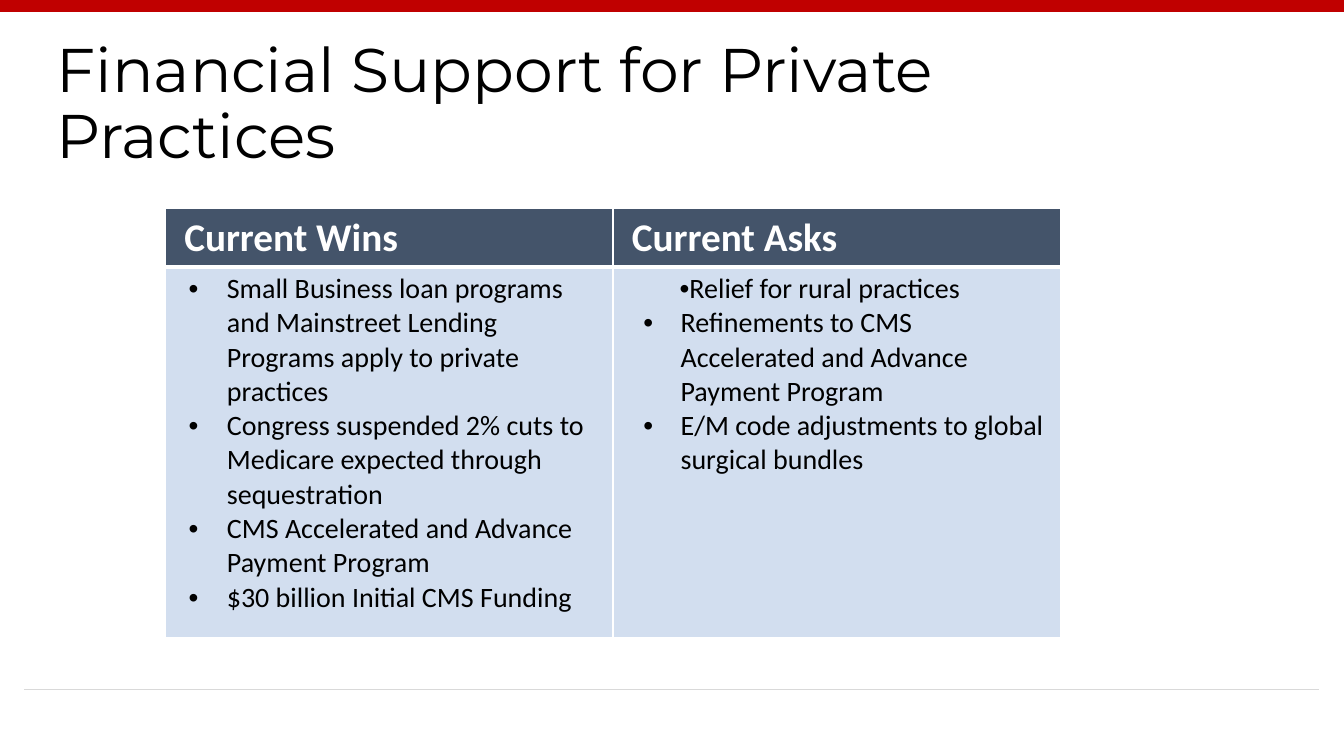
from lxml import etree
from pptx import Presentation
from pptx.dml.color import RGBColor as RGB
from pptx.enum.shapes import MSO_CONNECTOR as LINE
from pptx.enum.text import MSO_ANCHOR as ANCHOR, MSO_AUTO_SIZE as FIT, PP_ALIGN as ALIGN
from pptx.oxml.ns import qn
from pptx.util import Inches, Pt

HUES = {"red": "C00000", "gray": "D9D9D9", "navy": "44546A",
        "pale": "D2DEEF", "white": "FFFFFF", "black": "000000"}


def write(para, text, size=20, face="Calibri", hue="black", bold=False, bullet=None):
    """Fill a paragraph; bullet is its (left margin, first-line indent) in inches."""
    if bullet:
        para.level = 1
        props = para._p.get_or_add_pPr()
        props.set("marL", str(Inches(bullet[0])))
        props.set("indent", str(Inches(bullet[1])))
        etree.SubElement(props, qn("a:buFont"), typeface="Arial")
        etree.SubElement(props, qn("a:buChar"), char="•")
    para.alignment = ALIGN.LEFT
    run = para.add_run()
    run.text = text
    font = run.font
    font.size, font.name, font.bold = Pt(size), face, bold
    font.color.rgb = RGB.from_string(HUES[hue])


def edge(cell, low):
    """Draw white borders round a cell, with the bottom one low points wide."""
    props = cell._tc.get_or_add_tcPr()
    for side, wide in (("L", 1), ("R", 1), ("T", 1), ("B", low)):
        line = etree.SubElement(props, qn("a:ln" + side), w=str(Pt(wide)))
        fill = etree.SubElement(line, qn("a:solidFill"))
        etree.SubElement(fill, qn("a:srgbClr"), val=HUES["white"])


deck = Presentation()
deck.slide_width, deck.slide_height = Inches(13.33), Inches(7.5)
slide = deck.slides.add_slide(deck.slide_layouts[5])

# Rules at the top and foot
for left, right, y, hue, wide in ((0, 13.33, 0.06, "red", 9), (0.24, 13.08, 6.84, "gray", 0.5)):
    rule = slide.shapes.add_connector(
        LINE.STRAIGHT, Inches(left), Inches(y), Inches(right), Inches(y))
    rule.line.color.rgb = RGB.from_string(HUES[hue])
    rule.line.width = Pt(wide)
    etree.SubElement(rule._element.spPr, qn("a:effectLst"))

# Title
title = slide.shapes.title
title.left, title.top = Inches(0.46), Inches(0.32)
title.width, title.height = Inches(10.68), Inches(1.45)
frame = title.text_frame
frame.word_wrap, frame.auto_size = True, FIT.NONE
frame.vertical_anchor = ANCHOR.MIDDLE
frame.paragraphs[0].line_spacing = 0.9
write(frame.paragraphs[0], "Financial Support for Private Practices", size=44, face="Montserrat")

# Table of wins and asks
wins, asks, first = (0.51, -0.38), (0.57, -0.37), (0.19, 0.37)
cols = [
    (" Current Wins", [
        ("Small Business loan programs and Mainstreet Lending Programs apply to private practices",
         wins),
        ("Congress suspended 2% cuts to Medicare expected through sequestration", wins),
        ("CMS Accelerated and Advance Payment Program", wins),
        ("$30 billion Initial CMS Funding", wins)]),
    (" Current Asks", [
        ("Relief for rural practices", first),
        ("Refinements to CMS Accelerated and Advance Payment Program", asks),
        ("E/M code adjustments to global surgical bundles", asks)]),
]
table = slide.shapes.add_table(
    2, 2, Inches(1.64), Inches(2.07), Inches(8.88), Inches(4.25)).table
table.rows[0].height, table.rows[1].height = Inches(0.57), Inches(3.68)

for c, (name, items) in enumerate(cols):
    table.columns[c].width = Inches(4.44)
    head, body = table.cell(0, c), table.cell(1, c)
    for cell, hue, low in ((head, "navy", 3), (body, "pale", 1)):
        edge(cell, low)
        cell.fill.solid()
        cell.fill.fore_color.rgb = RGB.from_string(HUES[hue])
    write(head.text_frame.paragraphs[0], name, size=28, hue="white", bold=True)
    for i, (text, bullet) in enumerate(items):
        frame = body.text_frame
        para = frame.add_paragraph() if i else frame.paragraphs[0]
        write(para, text, bullet=bullet)

deck.save("out.pptx")
